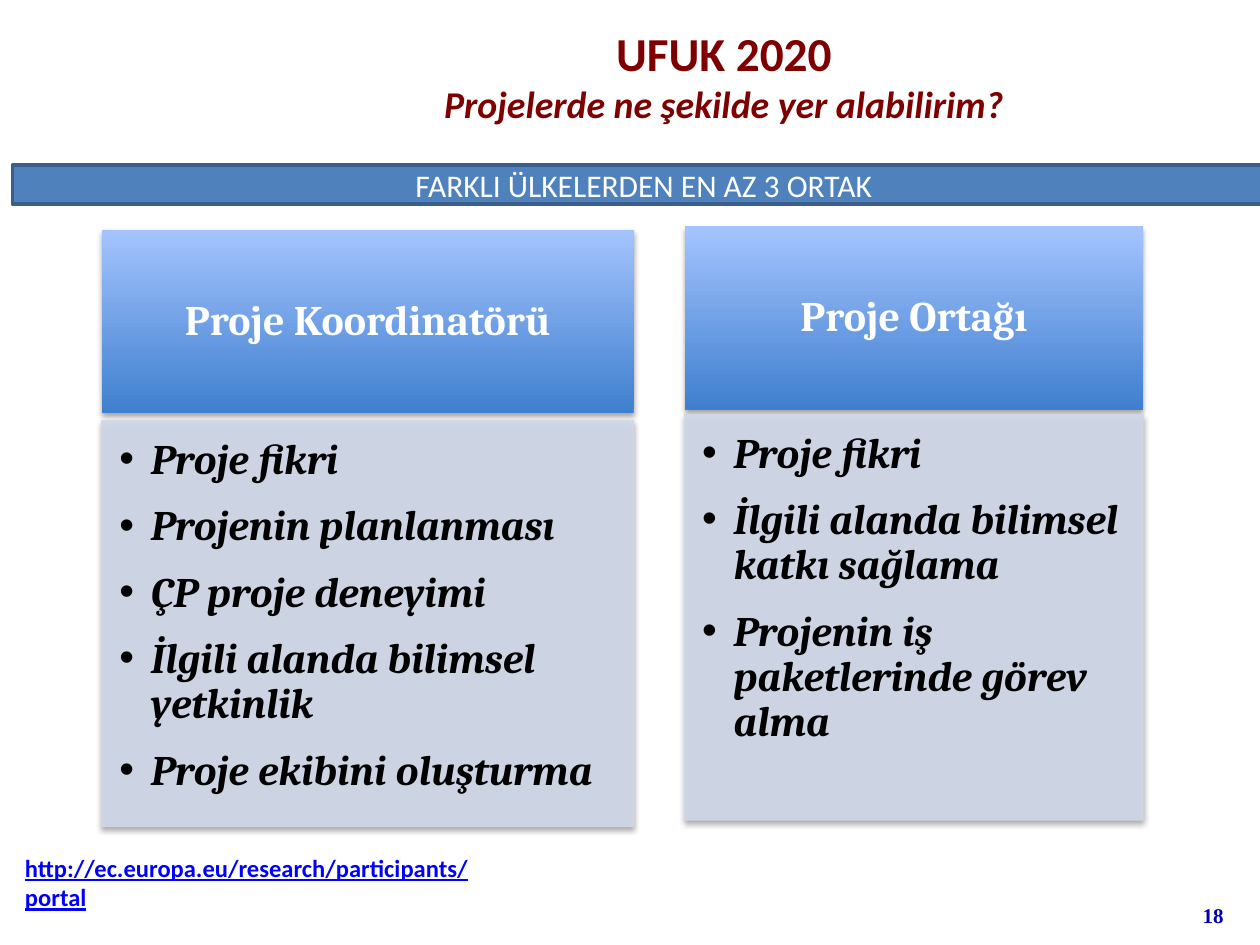
import pptx
import pptx.util
import pptx.dml.color
import pptx.enum.shapes
import pptx.enum.text
import pptx.oxml.ns
from lxml import etree

Pt = pptx.util.Pt
ALIGN = pptx.enum.text.PP_ALIGN
ANCHOR = pptx.enum.text.MSO_ANCHOR
qn = pptx.oxml.ns.qn

TITLE = "UFUK 2020"
SUBTITLE = "Projelerde ne şekilde yer alabilirim?"
BANNER = "FARKLI ÜLKELERDEN EN AZ 3 ORTAK"
LINK = "http://ec.europa.eu/research/participants/portal"
PAGE_NUMBER = "18"
ROLES = [
    {"name": "Proje Koordinatörü", "left": 58.2, "top": 131.2, "width": 304,
     "body_gap": 4.2,
     "duties": ["Proje fikri", "Projenin planlanması", "ÇP proje deneyimi",
                "İlgili alanda bilimsel yetkinlik", "Proje ekibini oluşturma"]},
    {"name": "Proje Ortağı", "left": 391.2, "top": 129.4, "width": 262,
     "body_gap": 2.4,
     "duties": ["Proje fikri", "İlgili alanda bilimsel katkı sağlama",
                "Projenin iş paketlerinde görev alma"]},
]
HEADER_HEIGHT, BODY_HEIGHT = 105, 231.8


def color(value):
    return pptx.dml.color.RGBColor.from_string(value)


def add_xml(parent, tag, **attributes):
    return etree.SubElement(parent, qn(tag), {k: str(v) for k, v in attributes.items()})


def add_box(page, left, top, width, height):
    return page.shapes.add_textbox(Pt(left), Pt(top), Pt(width), Pt(height))


def add_rectangle(page, left, top, width, height):
    box = page.shapes.add_shape(pptx.enum.shapes.MSO_SHAPE.RECTANGLE,
                                Pt(left), Pt(top), Pt(width), Pt(height))
    box.shadow.inherit = False
    return box


def add_soft_shadow(box):
    effects = box._element.spPr.find(qn("a:effectLst"))
    shadow = add_xml(effects, "a:outerShdw", blurRad=Pt(3.1), dist=Pt(1.8),
                     dir=5400000, rotWithShape=0)
    add_xml(add_xml(shadow, "a:srgbClr", val="000000"), "a:alpha", val=35000)


def write(box, lines, size=18, font="Calibri", ink="000000", bold=False,
          italic=False, underline=False, align=ALIGN.LEFT, anchor=ANCHOR.TOP,
          insets=(7.2, 3.6, 7.2, 3.6), spacing=None, after=0, bullet=False):
    """Fill a box with one paragraph per line, all in the same format."""
    frame = box.text_frame
    frame.word_wrap = True
    frame.vertical_anchor = anchor
    (frame.margin_left, frame.margin_top,
     frame.margin_right, frame.margin_bottom) = map(Pt, insets)
    for index, line in enumerate(lines):
        para = frame.paragraphs[0] if index == 0 else frame.add_paragraph()
        para.alignment = align
        para.space_before, para.space_after = Pt(0), Pt(after)
        if spacing:
            para.line_spacing = spacing
        if bullet:
            properties = para._p.get_or_add_pPr()
            properties.set("marL", str(Pt(18)))
            properties.set("indent", str(Pt(-18)))
            add_xml(properties, "a:buFont", typeface="Arial")
            add_xml(properties, "a:buChar", char="•")
        add_span(para, line, size, font, ink, bold, italic, underline)


def add_span(para, text, size, font, ink, bold=False, italic=False, underline=False):
    span = para.add_run()
    span.text = text
    span.font.size, span.font.name = Pt(size), font
    span.font.bold, span.font.italic, span.font.underline = bold, italic, underline
    span.font.color.rgb = color(ink)


def add_role(page, role):
    left, top, width = role["left"], role["top"], role["width"]
    header = add_rectangle(page, left, top, width, HEADER_HEIGHT)
    header.fill.gradient()
    header.fill.gradient_angle = 90
    for stop, shade in zip(header.fill.gradient_stops, ("3F7FCE", "A4C4FF")):
        stop.color.rgb = color(shade)
    header.line.fill.background()
    add_soft_shadow(header)
    write(header, [role["name"]], size=24, font="Cambria", ink="FFFFFF", bold=True,
          align=ALIGN.CENTER, anchor=ANCHOR.MIDDLE,
          insets=(13.7, 7.9, 13.7, 7.9), spacing=0.9)

    body = add_rectangle(page, left, top + HEADER_HEIGHT + role["body_gap"],
                         width, BODY_HEIGHT)
    body.fill.solid()
    body.fill.fore_color.rgb = color("D0D8E8")
    body.line.color.rgb = color("D0D8E8")
    body.line.width = Pt(0.75)
    for tint in body._element.spPr.iter(qn("a:srgbClr")):
        add_xml(tint, "a:alpha", val=90000)
    add_soft_shadow(body)
    write(body, role["duties"], size=24, font="Cambria", bold=True, italic=True,
          insets=(10, 10, 13.7, 15), spacing=0.9, after=12, bullet=True)


def main():
    deck = pptx.Presentation()
    deck.slide_width, deck.slide_height = Pt(720), Pt(540)
    page = deck.slides.add_slide(deck.slide_layouts[6])

    title = add_box(page, 107.3, 15.1, 612.7, 55.4)
    write(title, [TITLE], size=27, ink="7E0000", bold=True,
          align=ALIGN.CENTER, anchor=ANCHOR.MIDDLE)
    heading = title.text_frame.paragraphs[0]
    heading.add_line_break()
    add_span(heading, SUBTITLE, 21.6, "Calibri", "7E0000", bold=True, italic=True)

    for role in ROLES:
        add_role(page, role)

    write(add_box(page, 677.5, 508.3, 28.8, 28.8), [PAGE_NUMBER], size=12,
          font="Times New Roman", ink="0000AC", bold=True,
          align=ALIGN.RIGHT, anchor=ANCHOR.MIDDLE)
    write(add_box(page, 7.2, 483.8, 290.2, 24.5), [LINK], size=14, ink="0000FF",
          bold=True, underline=True)

    banner = add_rectangle(page, 7.2, 94.3, 721.4, 22.3)
    banner.fill.solid()
    banner.fill.fore_color.rgb = color("4F81BD")
    banner.line.color.rgb = color("3A5F8C")
    banner.line.width = Pt(2)
    write(banner, [BANNER], ink="FFFFFF", align=ALIGN.CENTER, anchor=ANCHOR.MIDDLE)

    deck.save("out.pptx")


if __name__ == "__main__":
    main()
